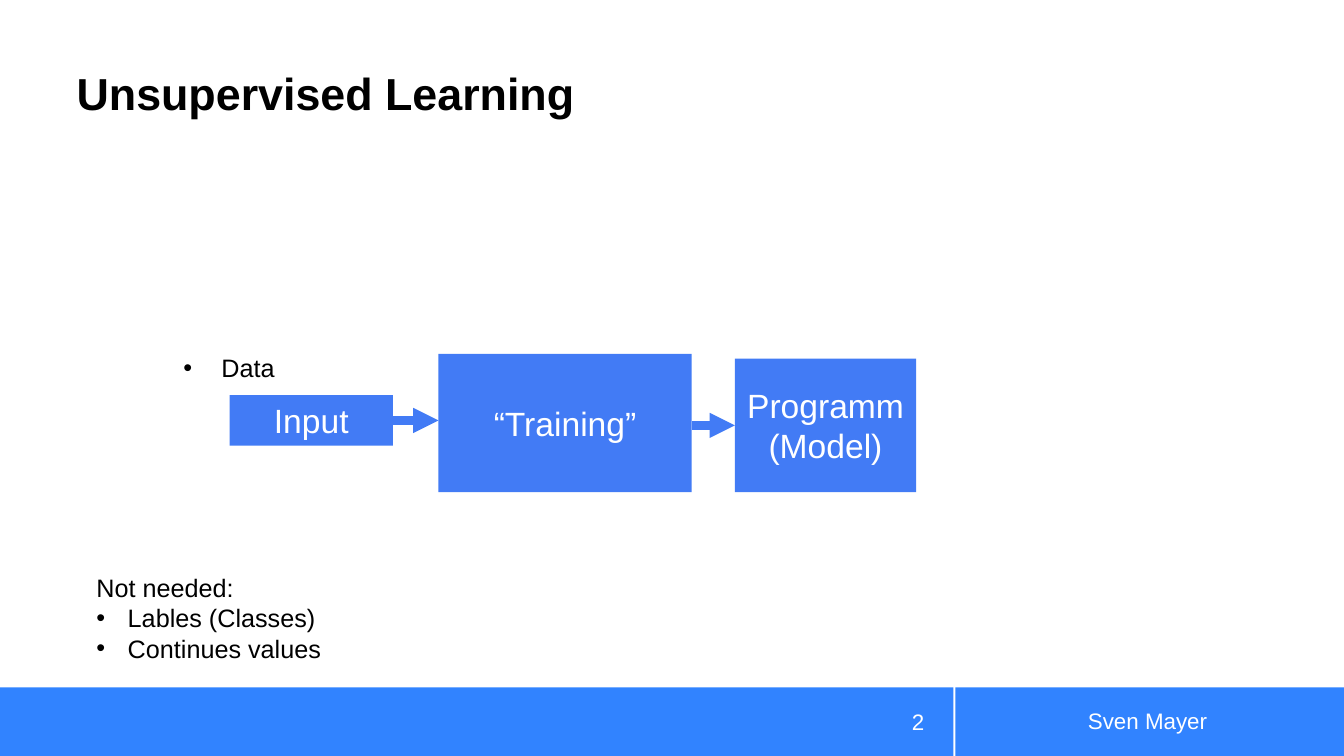
import pptx
import pptx.util
import pptx.dml.color
import pptx.enum.shapes
import pptx.enum.text
import pptx.oxml.ns
import lxml.etree

Cm = pptx.util.Cm
Pt = pptx.util.Pt
RGBColor = pptx.dml.color.RGBColor
ALIGN = pptx.enum.text.PP_ALIGN
ANCHOR = pptx.enum.text.MSO_ANCHOR
qn = pptx.oxml.ns.qn

FOOTER_BLUE = RGBColor(0x31, 0x83, 0xFF)
FLOW_BLUE = RGBColor(0x42, 0x7B, 0xF5)
WHITE = RGBColor(0xFF, 0xFF, 0xFF)
BLACK = RGBColor(0x00, 0x00, 0x00)

PAGE_WIDTH, PAGE_HEIGHT = 33.87, 19.05
FOOTER_HEIGHT = 1.73


def write(para, text, size, color, align=ALIGN.LEFT, bold=False):
    para.alignment = align
    span = para.add_run()
    span.text = text
    span.font.name = "Arial"
    span.font.size = Pt(size)
    span.font.bold = bold
    span.font.color.rgb = color


def add_rectangle(page, box, color):
    shape = page.shapes.add_shape(
        pptx.enum.shapes.MSO_SHAPE.RECTANGLE, *map(Cm, box))
    shape.shadow.inherit = False
    shape.fill.solid()
    shape.fill.fore_color.rgb = color
    shape.line.fill.background()
    return shape


def add_step(page, box, label):
    step = add_rectangle(page, box, FLOW_BLUE)
    step.text_frame.word_wrap = True
    step.text_frame.vertical_anchor = ANCHOR.MIDDLE
    write(step.text_frame.paragraphs[0], label, 24, WHITE, ALIGN.CENTER)
    return step


def add_arrow(page, start_x, end_x, y):
    arrow = page.shapes.add_connector(
        pptx.enum.shapes.MSO_CONNECTOR.STRAIGHT, start_x, y, end_x, y)
    arrow.line.color.rgb = FLOW_BLUE
    arrow.line.width = Pt(6)
    lxml.etree.SubElement(arrow.line._get_or_add_ln(), qn("a:tailEnd"), type="triangle")
    lxml.etree.SubElement(arrow._element.spPr, qn("a:effectLst"))
    return arrow


def add_notes(page, box, bullets, indent, heading=None):
    """Add an optional heading line above a bullet list."""
    frame = page.shapes.add_textbox(*map(Cm, box)).text_frame
    frame.word_wrap = False
    frame.auto_size = pptx.enum.text.MSO_AUTO_SIZE.SHAPE_TO_FIT_TEXT
    lines = ([heading] if heading else []) + bullets
    for index, line in enumerate(lines):
        para = frame.add_paragraph() if index else frame.paragraphs[0]
        write(para, line, 18, BLACK)
        if line != heading:
            properties = para._p.get_or_add_pPr()
            properties.set("marL", str(Cm(indent)))
            properties.set("indent", str(-Cm(indent)))
            lxml.etree.SubElement(properties, qn("a:buFont"), typeface="Arial")
            lxml.etree.SubElement(properties, qn("a:buChar"), char="•")


def add_title(page, box, text):
    title = page.shapes.title
    title.left, title.top, title.width, title.height = map(Cm, box)
    frame = title.text_frame
    frame.margin_left = frame.margin_right = frame.margin_top = frame.margin_bottom = 0
    frame.word_wrap = True
    frame.vertical_anchor = ANCHOR.BOTTOM
    frame.paragraphs[0].line_spacing = 0.9
    write(frame.paragraphs[0], text, 32, BLACK, bold=True)


def add_footer(page, box, number, author):
    left, top, width, height = box
    split, gap = 24.03, 0.05
    add_rectangle(page, (left, top, split, height), FOOTER_BLUE)
    add_rectangle(page, (left + split + gap, top, width - split - gap, height), FOOTER_BLUE)
    for text, offset, text_width, drop, align in (
            (author, 24.41, 9.02, 0.33, ALIGN.CENTER),
            (number, 21.36, 2.18, 0.36, ALIGN.RIGHT)):
        label = page.shapes.add_textbox(
            Cm(left + offset), Cm(top + drop), Cm(text_width), Cm(1.02))
        label.text_frame.word_wrap = True
        label.text_frame.vertical_anchor = ANCHOR.MIDDLE
        write(label.text_frame.paragraphs[0], text, 16, WHITE, align)


def add_training_flow(page, box):
    """Draw input, training and model, with the data note above the input."""
    left, top, width, height = box
    add_notes(page, (left, top, 2.82, 1.02), ["Data"], 0.96)
    source = add_step(page, (left + 1.42, top + 1.2, 4.11, 1.27), "Input")
    training = add_step(page, (left + 6.68, top + 0.16, 6.38, height - 0.16), "“Training”")
    model = add_step(
        page, (left + width - 4.57, top + 0.28, 4.57, height - 0.28), "Programm (Model)")

    source_middle = source.top + source.height // 2
    feed = add_arrow(page, source.left + source.width, training.left, source_middle)
    feed.begin_connect(source, 3)
    model_middle = model.top + model.height // 2
    result = add_arrow(page, training.left + training.width, model.left, model_middle)
    result.end_connect(model, 1)


def main():
    deck = pptx.Presentation()
    deck.slide_width, deck.slide_height = Cm(PAGE_WIDTH), Cm(PAGE_HEIGHT)
    page = deck.slides.add_slide(deck.slide_layouts.get_by_name("Title Only"))
    add_footer(page, (0, PAGE_HEIGHT - FOOTER_HEIGHT, PAGE_WIDTH, FOOTER_HEIGHT),
               "2", "Sven Mayer")
    add_title(page, (1.93, 0.33, 22.1, 2.69), "Unsupervised Learning")
    add_training_flow(page, (4.37, 8.76, 18.72, 3.64))
    add_notes(page, (2.18, 14.3, 6.22, 2.57),
              ["Lables (Classes)", "Continues values"], 0.79, "Not needed:")
    deck.save("out.pptx")


if __name__ == "__main__":
    main()
